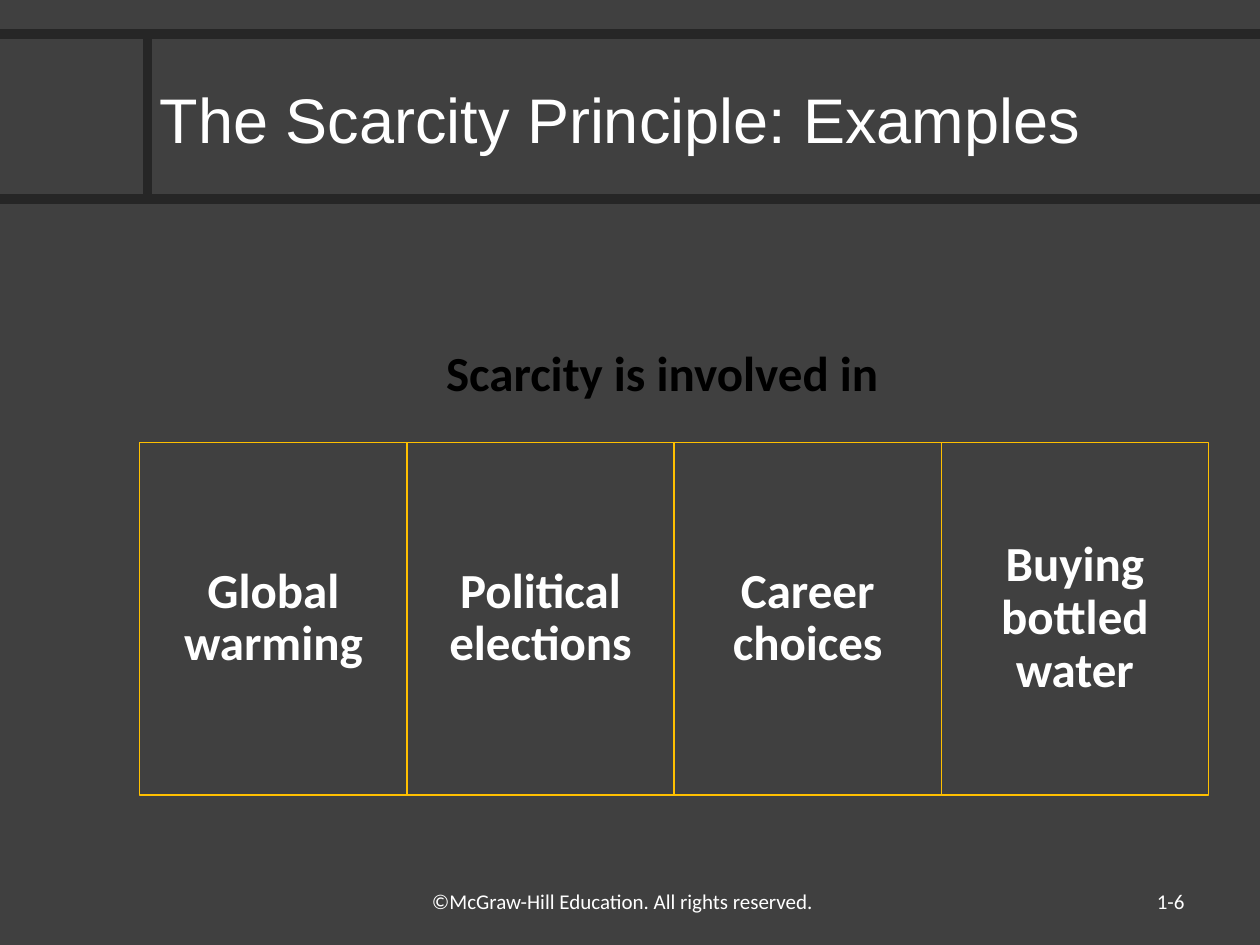
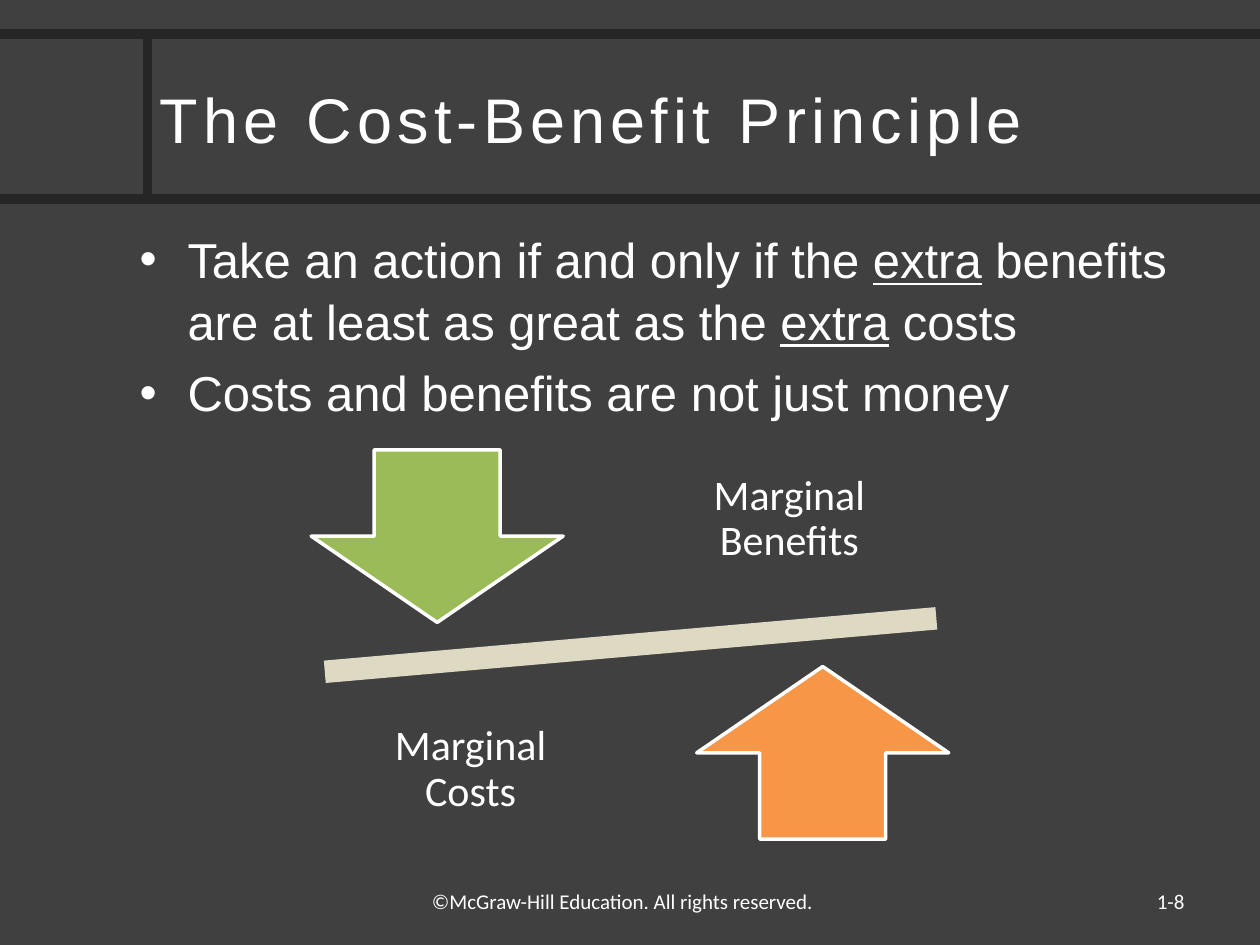
from typing import NamedTuple

from lxml import etree
from pptx import Presentation, util as u
from pptx.dml.color import RGBColor
from pptx.enum import shapes as kinds, text as te
from pptx.oxml.ns import qn

HUES = {
    "back": "404040", "band": "262626", "white": "FFFFFF", "black": "000000",
    "gold": "FFC000", "bar": "DDD9C3", "green": "9BBB59", "orange": "F79646",
}
HEAD, BODY = "Arial", "Calibri"
LEFT, MID, RIGHT = te.PP_ALIGN.LEFT, te.PP_ALIGN.CENTER, te.PP_ALIGN.RIGHT
FORMS = kinds.MSO_SHAPE
OWNER = "©McGraw-Hill Education. All rights reserved."


class Box(NamedTuple):
    left: float
    top: float
    width: float
    height: float

    def place(self) -> list:
        return [u.Inches(side) for side in self]


class Band(NamedTuple):
    x1: float
    y1: float
    x2: float
    y2: float


class Form(NamedTuple):
    kind: kinds.MSO_SHAPE
    box: Box
    fill: str | None = None
    line: str | None = None
    weight: float = 0
    turn: float = 0


class Label(NamedTuple):
    words: str
    box: Box


BANDS = [
    Band(0, 1.58, 10, 1.58),
    Band(1.17, 0.27, 1.17, 1.58),
    Band(0, 0.27, 10, 0.27),
]
CARDS = ["Global warming", "Political elections", "Career choices",
         "Buying bottled water"]
CARD = Box(1.11, 3.51, 2.12, 2.8)
POINTS = [
    "Take an action if and only if the _extra_ benefits are at least "
    "as great as the _extra_ costs",
    "Costs and benefits are not just money",
]
SCALE = [
    Form(FORMS.MATH_MINUS, Box(1.69, 4.74, 6.63, 0.76), "bar", turn=355),
    Form(FORMS.DOWN_ARROW, Box(2.47, 3.57, 2, 1.37), "green", "white", 2),
    Form(FORMS.UP_ARROW, Box(5.53, 5.29, 2, 1.37), "orange", "white", 2),
]
SIDES = [
    Label("Marginal Benefits", Box(5.2, 3.4, 2.13, 1.44)),
    Label("Marginal Costs", Box(2.67, 5.39, 2.13, 1.44)),
]


def hue(name: str) -> RGBColor:
    return RGBColor.from_string(HUES[name])


def write(shape, *paras: str, size: float, font: str = BODY,
          tint: str = "white", bold: bool = False, align=LEFT,
          middle: bool = True, inset=(0.1, 0.05, 0.1, 0.05),
          lead: float = 1, gap: float = 0, track: int = 0,
          bullet: str = "") -> None:
    frame = shape.text_frame
    frame.word_wrap = True
    frame.vertical_anchor = (te.MSO_ANCHOR.MIDDLE if middle
                             else te.MSO_ANCHOR.TOP)
    (frame.margin_left, frame.margin_top, frame.margin_right,
     frame.margin_bottom) = (u.Inches(side) for side in inset)
    for row, words in enumerate(paras):
        para = frame.add_paragraph() if row else frame.paragraphs[0]
        para.alignment = align
        para.line_spacing = lead
        if row:
            para.space_before = u.Pt(gap)
        if bullet:
            props = para._p.get_or_add_pPr()
            props.set("marL", str(u.Inches(0.38)))
            props.set("indent", str(-u.Inches(0.38)))
            etree.SubElement(props, qn("a:buFont")).set("typeface", HEAD)
            etree.SubElement(props, qn("a:buChar")).set("char", bullet)
        for part, piece in enumerate(words.split("_")):
            run = para.add_run()
            run.text = piece
            face = run.font
            face.name, face.size, face.bold = font, u.Pt(size), bold
            face.color.rgb = hue(tint)
            if part % 2:
                face.underline = True
            if track:
                run._r.get_or_add_rPr().set("spc", str(track))


def label(slide, box: Box, *paras: str, **style) -> None:
    write(slide.shapes.add_textbox(*box.place()), *paras, **style)


def draw(slide, form: Form):
    shape = slide.shapes.add_shape(form.kind, *form.box.place())
    shape.shadow.inherit = False
    shape.rotation = form.turn
    if form.fill:
        shape.fill.solid()
        shape.fill.fore_color.rgb = hue(form.fill)
    else:
        shape.fill.background()
    if form.line:
        shape.line.color.rgb = hue(form.line)
        shape.line.width = u.Pt(form.weight)
    else:
        shape.line.fill.background()
    return shape


def rule(slide, band: Band) -> None:
    line = slide.shapes.add_connector(
        kinds.MSO_CONNECTOR.STRAIGHT, *(u.Inches(end) for end in band))
    line.line.color.rgb = hue("band")
    line.line.width = u.Pt(5.5)
    etree.SubElement(line._element.spPr, qn("a:effectLst"))


def start(deck, title: str, page: str, track: int = 0):
    slide = deck.slides.add_slide(deck.slide_layouts[6])
    slide.background.fill.solid()
    slide.background.fill.fore_color.rgb = hue("back")
    for band in BANDS:
        rule(slide, band)
    label(slide, Box(1.17, 0.3, 8.83, 1.28), title,
          size=36, font=HEAD, track=track)
    label(slide, Box(7.17, 6.95, 2.33, 0.4), page, size=12, align=RIGHT)
    label(slide, Box(3.33, 7, 3.33, 0.35), OWNER, size=12, middle=False)
    return slide


def scarce(deck) -> None:
    slide = start(deck, "The Scarcity Principle: Examples", "1-6")
    style = dict(size=28, bold=True, align=MID, lead=0.9)
    label(slide, Box(1.11, 2.18, 8.47, 1.33), "Scarcity is involved in",
          tint="black", inset=(0.12, 0.39, 0.3, 0.12), **style)
    for col, words in enumerate(CARDS):
        box = CARD._replace(left=CARD.left + col * CARD.width)
        card = draw(slide, Form(FORMS.RECTANGLE, box, None, "gold", 0.75))
        write(card, words, inset=[0.12] * 4, **style)


def weigh(deck) -> None:
    slide = start(deck, "The Cost-Benefit Principle", "1-8", track=300)
    label(slide, Box(1.01, 1.75, 8.49, 4.95), *POINTS, size=28, font=HEAD,
          middle=False, lead=1.05, gap=5.6, bullet="•")
    for form in SCALE:
        draw(slide, form)
    for side in SIDES:
        label(slide, side.box, side.words, size=24, align=MID, lead=0.9,
              inset=[0.19] * 4)


def main() -> None:
    deck = Presentation()
    deck.slide_width, deck.slide_height = u.Inches(10), u.Inches(7.5)
    scarce(deck)
    weigh(deck)
    deck.save("out.pptx")


if __name__ == "__main__":
    main()
